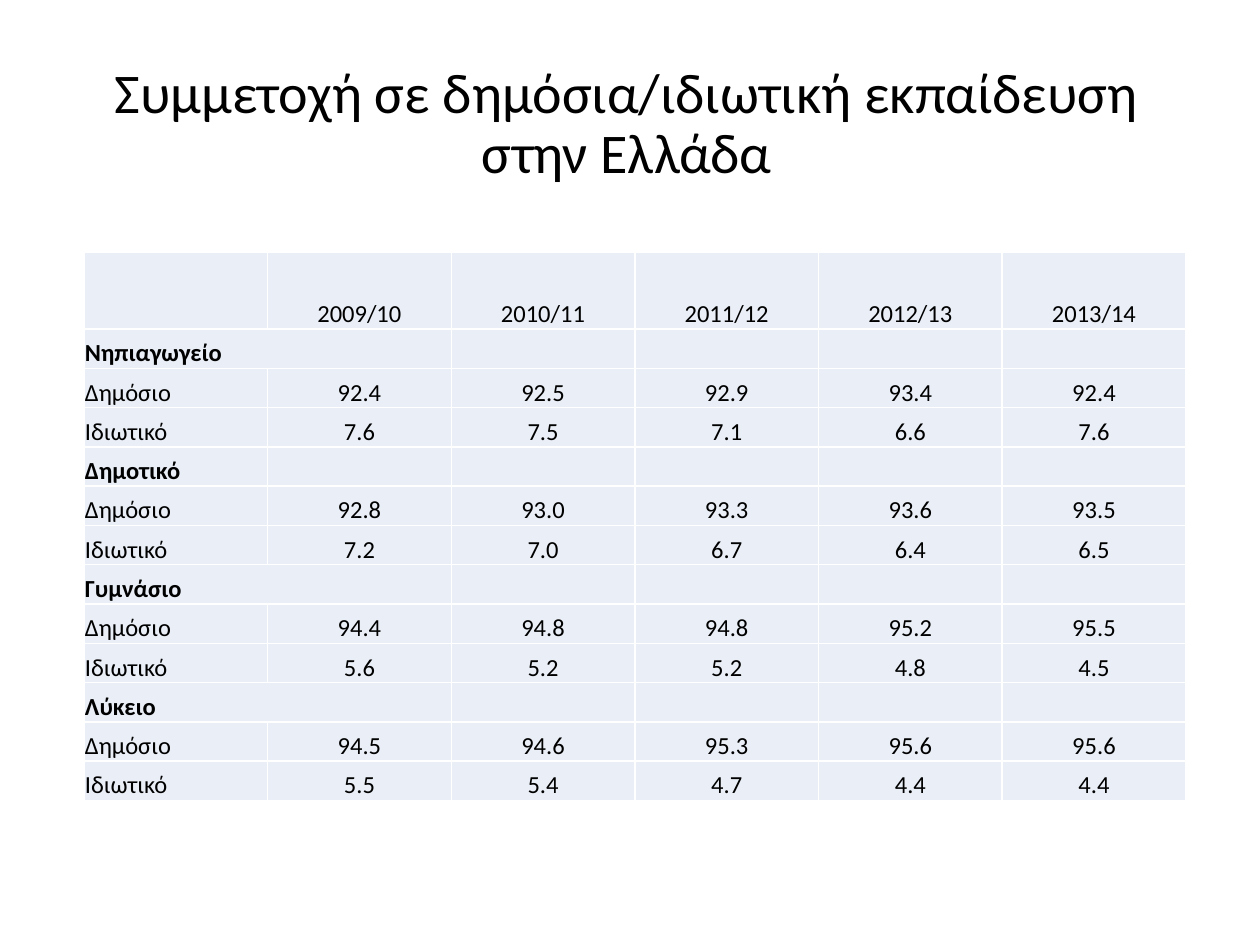
from lxml.etree import SubElement
from pptx import Presentation
from pptx.dml.color import RGBColor
from pptx.enum.text import MSO_ANCHOR as Anchor, PP_ALIGN as Align
from pptx.oxml.ns import qn
from pptx.util import Pt

PX = 914400 / 126
FONT = "Calibri"
INK, PALE, WHITE = "000000", "EAEFF7", "FFFFFF"
SIZE = 14
HEAD = 77

YEARS = ["2009/10", "2010/11", "2011/12", "2012/13", "2013/14"]
KINDS = ["Δημόσιο", "Ιδιωτικό"]
# level, whether its name spans two columns, shares for each kind
LEVELS = [
    ("Νηπιαγωγείο", True, ["92.4 92.5 92.9 93.4 92.4", "7.6 7.5 7.1 6.6 7.6"]),
    ("Δημοτικό", False, ["92.8 93.0 93.3 93.6 93.5", "7.2 7.0 6.7 6.4 6.5"]),
    ("Γυμνάσιο", True, ["94.4 94.8 94.8 95.2 95.5", "5.6 5.2 5.2 4.8 4.5"]),
    ("Λύκειο", True, ["94.5 94.6 95.3 95.6 95.6", "5.5 5.4 4.7 4.4 4.4"]),
]


def emu(px):
    return round(px * PX)


def color(text):
    return RGBColor.from_string(text)


def assign(item, form):
    for name, value in form.items():
        setattr(item, name, value)


def write(para, text, size, bold=False):
    run = para.add_run()
    run.text = text
    assign(run.font, {"name": FONT, "size": Pt(size), "bold": bold})
    run.font.color.rgb = color(INK)


def add_title(slide, box, text):
    frame = slide.shapes.add_textbox(*map(emu, box)).text_frame
    assign(frame, {"word_wrap": True, "vertical_anchor": Anchor.MIDDLE})
    para = frame.paragraphs[0]
    assign(para, {"alignment": Align.CENTER, "line_spacing": 0.9})
    write(para, text, 32)


def add_edges(cell):
    """Draw a thin white line on all four sides of a cell."""
    props = cell._tc.get_or_add_tcPr()
    for side in ("lnL", "lnR", "lnT", "lnB"):
        line = SubElement(props, qn(f"a:{side}"), w=str(Pt(1)))
        fill = SubElement(line, qn("a:solidFill"))
        SubElement(fill, qn("a:srgbClr"), val=WHITE)


def fill_cell(cell, text, align, bold):
    assign(cell, {
        "margin_left": emu(1), "margin_right": emu(1), "margin_top": emu(1),
        "margin_bottom": 0, "vertical_anchor": Anchor.BOTTOM,
    })
    add_edges(cell)
    cell.fill.solid()
    cell.fill.fore_color.rgb = color(PALE)
    para = cell.text_frame.paragraphs[0]
    para.alignment = align
    if text:
        write(para, text, SIZE, bold)
    else:
        # keeps an empty cell from stretching its row
        para._p.get_or_add_endParaRPr().set("sz", str(SIZE * 100))


def list_rows():
    """Give each row as its texts, whether it names a level, and its span."""
    rows = [([""] + YEARS, False, False)]
    for level, wide, shares in LEVELS:
        rows.append(([level] + [""] * len(YEARS), True, wide))
        for kind, line in zip(KINDS, shares):
            rows.append(([kind] + line.split(), False, False))
    return rows


def add_shares(slide, box):
    rows = list_rows()
    count = len(YEARS) + 1
    table = slide.shapes.add_table(len(rows), count, *map(emu, box)).table
    assign(table, {"first_row": False, "horz_banding": False})
    for col in table.columns:
        col.width = emu(box[2] / count)
    for r, (texts, bold, wide) in enumerate(rows):
        table.rows[r].height = emu((box[3] - HEAD) / (len(rows) - 1) if r else HEAD)
        for c, text in enumerate(texts):
            align = Align.CENTER if c else Align.LEFT
            fill_cell(table.cell(r, c), text, align, bold)
        if wide:
            table.cell(r, 0).merge(table.cell(r, 1))


def main():
    deck = Presentation()
    assign(deck, {"slide_width": emu(1260), "slide_height": emu(945)})
    slide = deck.slides.add_slide(deck.slide_layouts[6])
    add_title(slide, (84, 73, 1086, 105),
              "Συμμετοχή σε δημόσια/ιδιωτική εκπαίδευση στην Ελλάδα")
    add_shares(slide, (84, 252, 1102, 549))
    deck.save("out.pptx")


if __name__ == "__main__":
    main()
